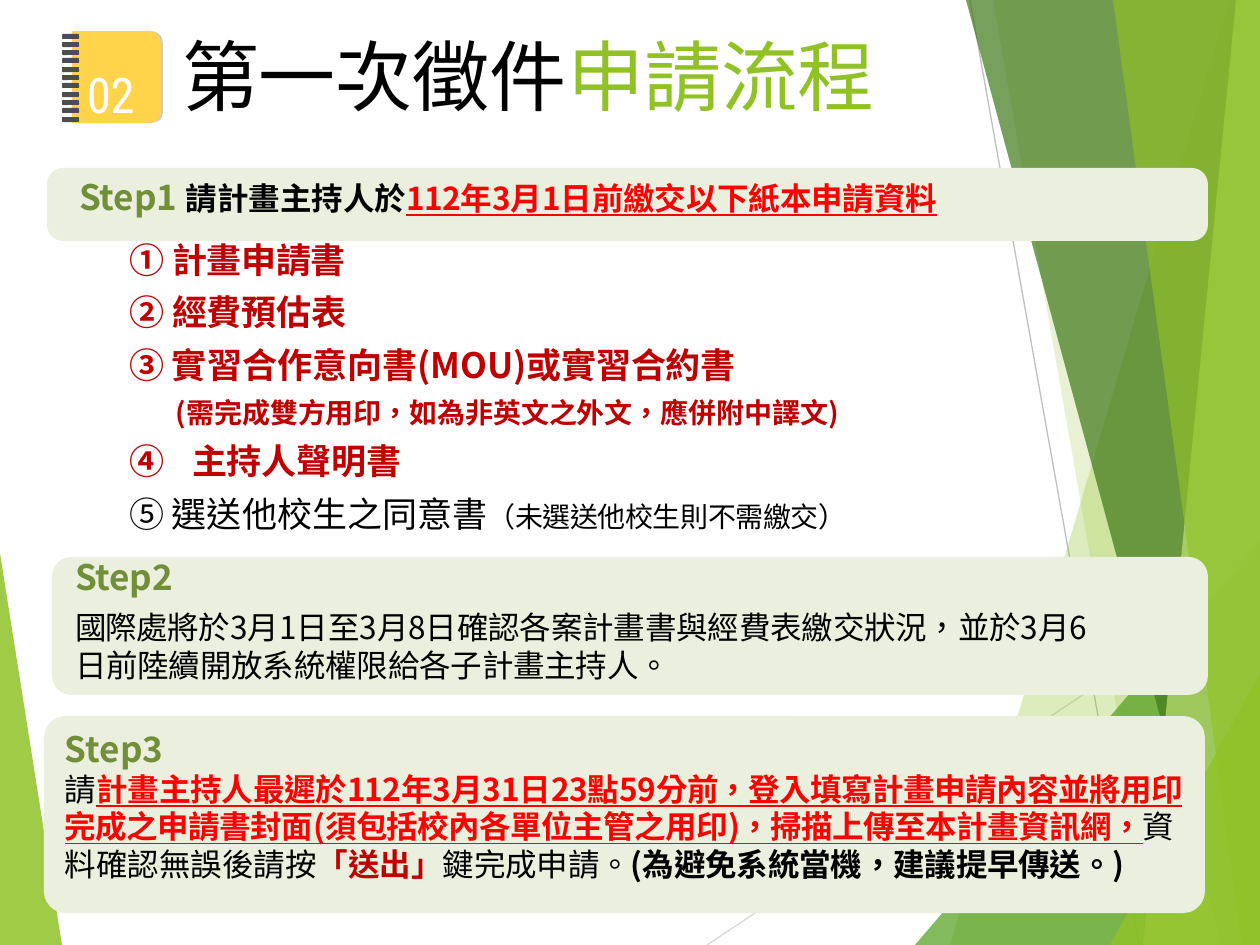
from lxml import etree
from pptx import Presentation
from pptx import util as u
from pptx.dml.color import RGBColor
from pptx.enum import shapes, text
from pptx.oxml.ns import qn

PX = 914400 / 126
W, H = 1260, 945
THEME = {
    "cjk": "Noto Sans CJK JP", "number": "Roboto Condensed",
    "lime": "90C226", "green": "54A021", "forest": "3F7819", "pale": "C0E474",
    "panel": "EBF0DE", "cover": "FFD34A", "cover_edge": "CCCCCC", "ring": "4D4D4D",
    # text styles: size, colour, bold, underline
    "badge": (28, "FFFFFF", False, False),
    "title": (44, "000000", False, False),
    "title_accent": (44, "90C226", False, False),
    "step": (20, "718E39", True, False),
    "plain": (18, "000000", False, False),
    "strong": (18, "000000", True, False),
    "deadline": (18, "FF0000", True, True),
    "button": (18, "C00000", True, False),
    "item": (20, "C00000", True, False),
    "item_note": (16, "C00000", True, False),
    "option": (20, "000000", False, False),
    "option_note": (16, "000000", False, False),
}


def px(n):
    return u.Emu(round(n * PX))


def paint(sp, colour, alpha=100):
    """Give a shape a flat fill with no line or shadow; alpha is in percent."""
    sp.shadow.inherit = False
    sp.line.fill.background()
    sp.fill.solid()
    sp.fill.fore_color.rgb = RGBColor.from_string(colour)
    if alpha < 100:
        clr = sp.fill._xPr.find(".//" + qn("a:srgbClr"))
        etree.SubElement(clr, qn("a:alpha")).set("val", str(alpha * 1000))


prs = Presentation()
prs.slide_width, prs.slide_height = px(W), px(H)
s = prs.slides.add_slide(prs.slide_layouts[3])

# Background facets: points, colour, opacity, then the thin rules behind them
left_facet = ([(0, 553), (62, H), (0, H)], "lime", 85)
right_facets = [
    ([(1229, 0), (950, H), (W, H), (W, 0)], "lime", 30),
    ([(993, 0), (1158, H), (W, H), (W, 0)], "lime", 20),
    ([(915, H), (W, 541), (W, H)], "green", 72),
    ([(966, 0), (1222, H), (W, H), (W, 0)], "forest", 70),
    ([(1236, 0), (1143, H), (W, H), (W, 0)], "pale", 70),
    ([(1113, 0), (1242, H), (W, H), (W, 0)], "lime", 65),
    ([(1110, H), (W, 674), (W, H)], "lime", 80),
]
for x1, y1, x2, y2, grey in [(707, H, W, 577, "D9D9D9"), (970, 0, 1139, H, "BFBFBF")]:
    ln = s.shapes.add_connector(shapes.MSO_CONNECTOR.STRAIGHT, px(x1), px(y1), px(x2), px(y2))
    ln.line.color.rgb = RGBColor.from_string(grey)
    ln.line.width = u.Pt(0.75)
    etree.SubElement(ln._element.spPr, qn("a:effectLst"))

# Notebook cover, drawn twice: its edge two pixels to the right, then the face
cover = [(149, 31), (72, 31), (72, 123), (149, 123), (154, 122), (158, 120),
         (160, 117), (161, 112), (161, 43), (160, 38), (158, 35), (154, 32)]
covers = [([(x + dx, y) for x, y in cover], colour, 100)
          for dx, colour in [(2, "cover_edge"), (0, "cover")]]
for points, colour, alpha in [left_facet] + right_facets + covers:
    fb = s.shapes.build_freeform(*points[0], scale=PX)
    fb.add_line_segments(points[1:], close=True)
    paint(fb.convert_to_shape(), THEME[colour], alpha)

# Step panels and notebook rings: left, top, width, height, corner radius, colour
panels = [(47, 168, 1161, 73, 16, "panel"), (52, 557, 1156, 138, 20, "panel"),
          (44, 716, 1161, 197, 22, "panel")]
rings = [(62, 34 + i * 83 // 10, 17, 5, 1, "ring") for i in range(11)]
for x, y, w, h, radius, colour in panels + rings:
    sp = s.shapes.add_shape(shapes.MSO_SHAPE.ROUNDED_RECTANGLE, px(x), px(y), px(w), px(h))
    sp.adjustments[0] = round(radius / h, 2)
    paint(sp, THEME[colour])

# Paragraphs: left margin px, space before pt, tab stop px, runs (text, style, spacing pt)
badge = [(1, 0, None, [("02", "badge", -0.4)])]
title = [(1, 1, None, [("第一次徵件", "title", 0), ("申請流程", "title_accent", -0.1)])]
steps_1_2 = [
    (5, 7.8, None, [("Step1 ", "step", 0), ("請計畫主持人於", "strong", 0),
                    ("112", "deadline", -0.3), ("年3月1", "deadline", 0),
                    ("日前繳交以下紙本申請資料", "deadline", -0.1)]),
    (55, 12, None, [("① ", "item", 0), ("計畫申請書", "item", -0.2)]),
    (55, 6, None, [("② ", "item", 0), ("經費預估表", "item", -0.1)]),
    (55, 6, None, [("③ 實習合作意向書", "item", 0), ("(MOU)或實習合約書", "item", -0.1)]),
    (101, 6, None, [("(", "item_note", 0.5),
                    ("需完成雙方用印，如為非英文之外文，應併附中譯", "item_note", 0),
                    ("文)", "item_note", -0.2)]),
    (55, 6, 118, [("④\t", "item", -0.5), ("主持人聲明書", "item", -0.1)]),
    (55, 6, None, [("⑤ 選送他校生之同意書", "option", 0),
                   ("（未選送他校生則不需繳交", "option_note", -0.2),
                   ("）", "option_note", -0.5)]),
    (1, 12, None, [("Step2", "step", -0.1)]),
    (1, 6, None, [("國際處將於", "plain", -0.3),
                  ("3月1日至3月8日確認各案計畫書與經費表繳交狀況，並於3月6日前陸續"
                   "開放系統權限給各子計畫主持人。", "plain", -0.1)]),
]
step_3 = [
    (1, 0.3, None, [("Step3", "step", 0)]),
    (1, 0.3, None, [("請", "plain", -0.1), ("計畫主持人最遲於", "deadline", -0.1),
                    ("112", "deadline", -0.5), ("年3月", "deadline", -0.1),
                    ("31", "deadline", 0),
                    ("日23點59分前，登入填寫計畫申請內容並將用印完成之申請書封面"
                     "(須包括校內各單位主管之用印)，掃描上傳至本計畫資訊網，", "deadline", -0.3),
                    ("資料確認無誤後請按", "plain", 0), ("「送出」", "button", 0),
                    ("鍵完成申請。", "plain", -0.1),
                    ("(為避免系統當機，建議提早傳送。)", "strong", -0.1)]),
]

# Text holder, box, top inset, paragraphs
title_ph, steps_ph, step_3_ph = s.placeholders
badge_box = s.shapes.add_textbox(0, 0, 0, 0)
for sp, box, inset, paragraphs in [(badge_box, (86, 64, 64, 58), 0, badge),
                                   (title_ph, (181, 28, 695, 96), 1, title),
                                   (steps_ph, (74, 163, 1042, 527), 12, steps_1_2),
                                   (step_3_ph, (64, 727, 1124, 158), 0, step_3)]:
    sp.element.getparent().append(sp.element)  # bring in front of the panels
    sp.left, sp.top, sp.width, sp.height = map(px, box)
    tf = sp.text_frame
    tf.word_wrap = True
    tf.auto_size = text.MSO_AUTO_SIZE.NONE
    tf.vertical_anchor = text.MSO_ANCHOR.TOP
    tf.margin_left = tf.margin_right = tf.margin_bottom = 0
    tf.margin_top = px(inset)
    for i, (margin, before, tab, runs) in enumerate(paragraphs):
        p = tf.add_paragraph() if i else tf.paragraphs[0]
        p.alignment = text.PP_ALIGN.LEFT
        p.space_before = u.Pt(before)
        pPr = p._p.get_or_add_pPr()
        pPr.set("marL", str(px(margin)))
        pPr.set("indent", "0")
        etree.SubElement(pPr, qn("a:buNone"))
        if tab:
            tabs = etree.SubElement(pPr, qn("a:tabLst"))
            etree.SubElement(tabs, qn("a:tab"), pos=str(px(tab)), algn="l")
        for words, style, spacing in runs:
            size, colour, bold, underline = THEME[style]
            face = THEME["number" if style == "badge" else "cjk"]
            r = p.add_run()
            r.text = words
            r.font.size, r.font.bold, r.font.underline = u.Pt(size), bold, underline
            r.font.color.rgb = RGBColor.from_string(colour)
            r.font.name = face
            rPr = r._r.get_or_add_rPr()
            rPr.set("spc", str(round(spacing * 100)))
            if style != "item_note":
                rPr.set("lang", "zh-TW")
            rPr.find(qn("a:latin")).addnext(etree.Element(qn("a:ea"), typeface=face))

prs.save("out.pptx")
